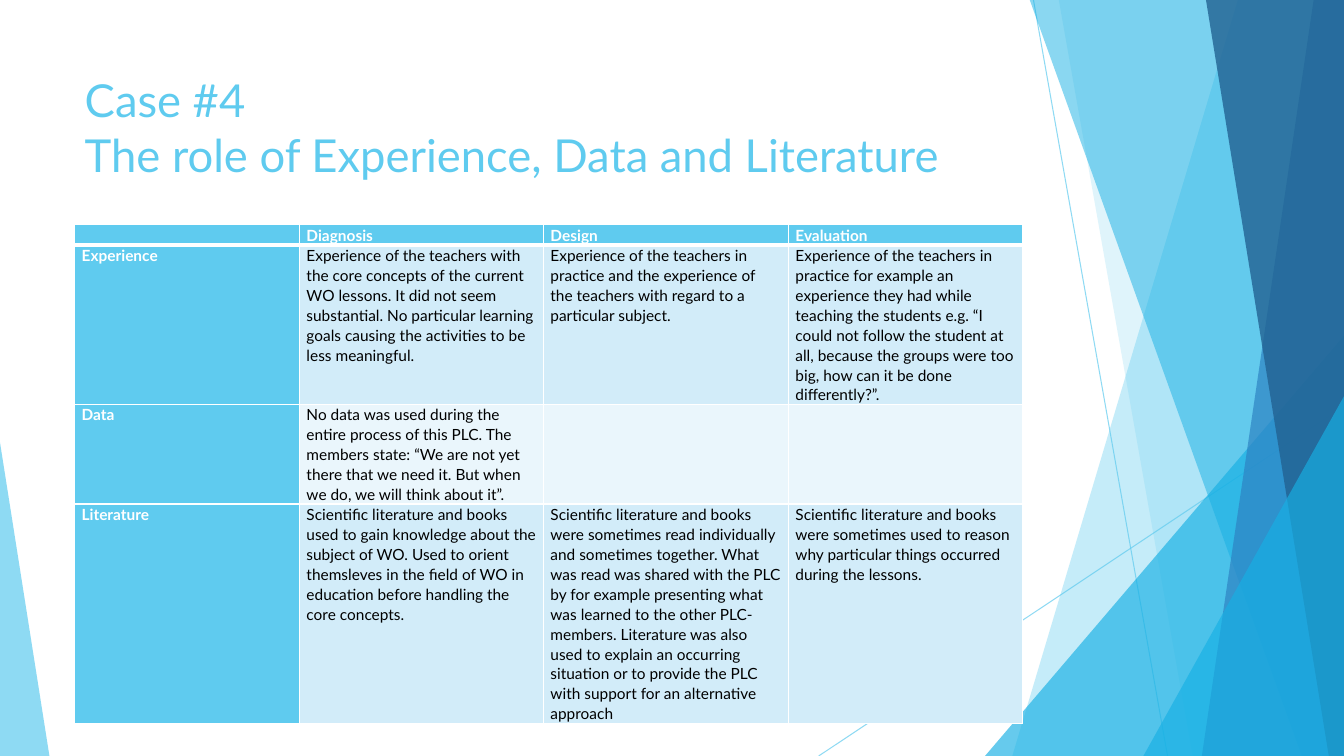
from dataclasses import dataclass

from pptx import Presentation
from pptx.dml.color import RGBColor
from pptx.enum.shapes import MSO_CONNECTOR, MSO_SHAPE
from pptx.enum.text import MSO_ANCHOR, MSO_AUTO_SIZE, PP_ALIGN
from pptx.oxml.ns import qn
from pptx.oxml.xmlchemy import OxmlElement
from pptx.util import Inches, Pt


@dataclass(frozen=True)
class Theme:
    font: str = "Lato"
    sky: str = "5FCBEF"
    cyan: str = "17B0E4"
    blue: str = "2E83C3"
    navy: str = "226292"
    band: str = "D2ECF9"
    pale: str = "EAF6FC"
    white: str = "FFFFFF"
    black: str = "000000"
    title: float = 32.4
    body: float = 11


THEME = Theme()
WIDE, HIGH = 13.33, 7.5
TOP = -0.01

LINES = [
    (10.25, 0, 11.58, HIGH),
    (WIDE, 4.03, 8.12, HIGH),
]
BACK = [
    (12.28, 10.04, THEME.sky, 36),
    (10.5, 11.83, THEME.sky, 20),
]
FRONT = [
    (10.21, 12.91, THEME.cyan, 50),
    (13.03, 11.92, THEME.blue, 70),
    (11.96, 13.18, THEME.navy, 80),
]

COLS = [2.23, 2.42, 2.43, 2.32]
ROWS = [0.2, 1.57, 0.98, 2.17]
FILLS = [THEME.sky, THEME.band, THEME.pale, THEME.band]
CELLS = [
    ["", "Diagnosis", "Design", "Evaluation"],
    [
        "Experience",
        "Experience of the teachers with the core concepts of the current WO lessons. "
        "It did not seem substantial. No particular learning goals causing the "
        "activities to be less meaningful.",
        "Experience of the teachers in practice and the experience of the teachers "
        "with regard to a particular subject.",
        "Experience of the teachers in practice for example an experience they had "
        "while teaching the students e.g. “I could not follow the student at all, "
        "because the groups were too big, how can it be done differently?”.",
    ],
    [
        "Data",
        "No data was used during the entire process of this PLC. The members state: "
        "“We are not yet there that we need it. But when we do, we will think about it”.",
        "",
        "",
    ],
    [
        "Literature",
        "Scientific literature and books used to gain knowledge about the subject of "
        "WO. Used to orient themsleves in the field of WO in education before "
        "handling the core concepts.",
        "Scientific literature and books were sometimes read individually and "
        "sometimes together. What was read was shared with the PLC by for example "
        "presenting what was learned to the other PLC-members. Literature was also "
        "used to explain an occurring situation or to provide the PLC with support "
        "for an alternative approach",
        "Scientific literature and books were sometimes used to reason why "
        "particular things occurred during the lessons.",
    ],
]


def apply(target, values):
    for name, value in values.items():
        setattr(target, name, value)


def set_font(font, size, color, bold=False):
    apply(font, {"name": THEME.font, "size": Pt(size), "bold": bold})
    font.color.rgb = RGBColor.from_string(color)


def fade(shape, percent):
    for color in shape.element.spPr.iter(qn("a:srgbClr")):
        alpha = OxmlElement("a:alpha")
        alpha.set("val", str(percent * 1000))
        color.append(alpha)


def paint(shape, color, percent):
    shape.shadow.inherit = False
    shape.fill.solid()
    shape.fill.fore_color.rgb = RGBColor.from_string(color)
    shape.line.fill.background()
    fade(shape, percent)


def add_line(slide, ends):
    line = slide.shapes.add_connector(MSO_CONNECTOR.STRAIGHT, *map(Inches, ends))
    line.line.color.rgb = RGBColor.from_string(THEME.sky)
    line.line.width = Pt(0.75)
    fade(line, 70)
    line.element.spPr.append(OxmlElement("a:effectLst"))


def add_shard(slide, upper, lower, color, percent):
    form = slide.shapes.build_freeform(Inches(upper), Inches(TOP))
    points = [(WIDE, TOP), (WIDE, HIGH), (lower, HIGH)]
    form.add_line_segments([(Inches(x), Inches(y)) for x, y in points])
    paint(form.convert_to_shape(), color, percent)


def add_wedge(slide, box, tip, color, percent):
    wedge = slide.shapes.add_shape(MSO_SHAPE.ISOSCELES_TRIANGLE, *map(Inches, box))
    wedge.adjustments[0] = tip
    paint(wedge, color, percent)


def add_decor(slide):
    for ends in LINES:
        add_line(slide, ends)
    for shard in BACK:
        add_shard(slide, *shard)
    add_wedge(slide, (9.77, 3.33, 3.56, 4.17), 1, THEME.cyan, 66)
    for shard in FRONT:
        add_shard(slide, *shard)
    add_wedge(slide, (11.34, 3.93, 1.99, 3.57), 1, THEME.cyan, 66)
    add_wedge(slide, (0, 4.39, 0.49, 3.11), 0, THEME.sky, 70)


def add_title(slide, text):
    title = slide.shapes.title
    apply(title, {
        "left": Inches(0.74), "top": Inches(0.67),
        "width": Inches(9.4), "height": Inches(1.44),
    })
    frame = title.text_frame
    frame.text = text
    apply(frame, {
        "word_wrap": True,
        "auto_size": MSO_AUTO_SIZE.NONE,
        "vertical_anchor": MSO_ANCHOR.TOP,
    })
    para = frame.paragraphs[0]
    para.alignment = PP_ALIGN.LEFT
    for run in para.runs:
        set_font(run.font, THEME.title, THEME.sky)
    title.element.getparent().append(title.element)


def add_edge(cell, side, width):
    edge = OxmlElement(f"a:ln{side}")
    edge.set("w", str(Pt(width)))
    fill = OxmlElement("a:solidFill")
    color = OxmlElement("a:srgbClr")
    color.set("val", THEME.white)
    fill.append(color)
    edge.append(fill)
    cell.get_or_add_tcPr().append(edge)


def fill_cell(cell, text, fill, head, top, base):
    apply(cell, {
        "margin_left": Inches(0.07), "margin_right": Inches(0.07),
        "margin_top": 0, "margin_bottom": 0,
        "vertical_anchor": MSO_ANCHOR.TOP,
    })
    for side, width in zip("LRTB", (1, 1, top, base)):
        add_edge(cell._tc, side, width)
    cell.fill.solid()
    cell.fill.fore_color.rgb = RGBColor.from_string(fill)
    para = cell.text_frame.paragraphs[0]
    para.line_spacing = 1.07
    if text:
        run = para.add_run()
        run.text = text
        set_font(run.font, THEME.body, THEME.white if head else THEME.black, head)
    else:
        end = OxmlElement("a:endParaRPr")
        end.set("sz", str(THEME.body * 100))
        para._p.append(end)


def add_grid(slide):
    box = (0.74, 2.23, sum(COLS), sum(ROWS))
    frame = slide.shapes.add_table(len(ROWS), len(COLS), *map(Inches, box))
    table = frame.table
    for col, width in zip(table.columns, COLS):
        col.width = Inches(width)
    for r, (row, high) in enumerate(zip(table.rows, ROWS)):
        row.height = Inches(high)
        for c, text in enumerate(CELLS[r]):
            head = r == 0 or c == 0
            fill = THEME.sky if head else FILLS[r]
            top = 3 if r == 1 else 1
            base = 3 if r == 0 else 1
            fill_cell(table.cell(r, c), text, fill, head, top, base)


def main():
    deck = Presentation()
    apply(deck, {"slide_width": Inches(WIDE), "slide_height": Inches(HIGH)})
    slide = deck.slides.add_slide(deck.slide_layouts[5])
    add_decor(slide)
    add_title(slide, "Case #4\vThe role of Experience, Data and Literature")
    add_grid(slide)
    deck.save("out.pptx")


if __name__ == "__main__":
    main()
